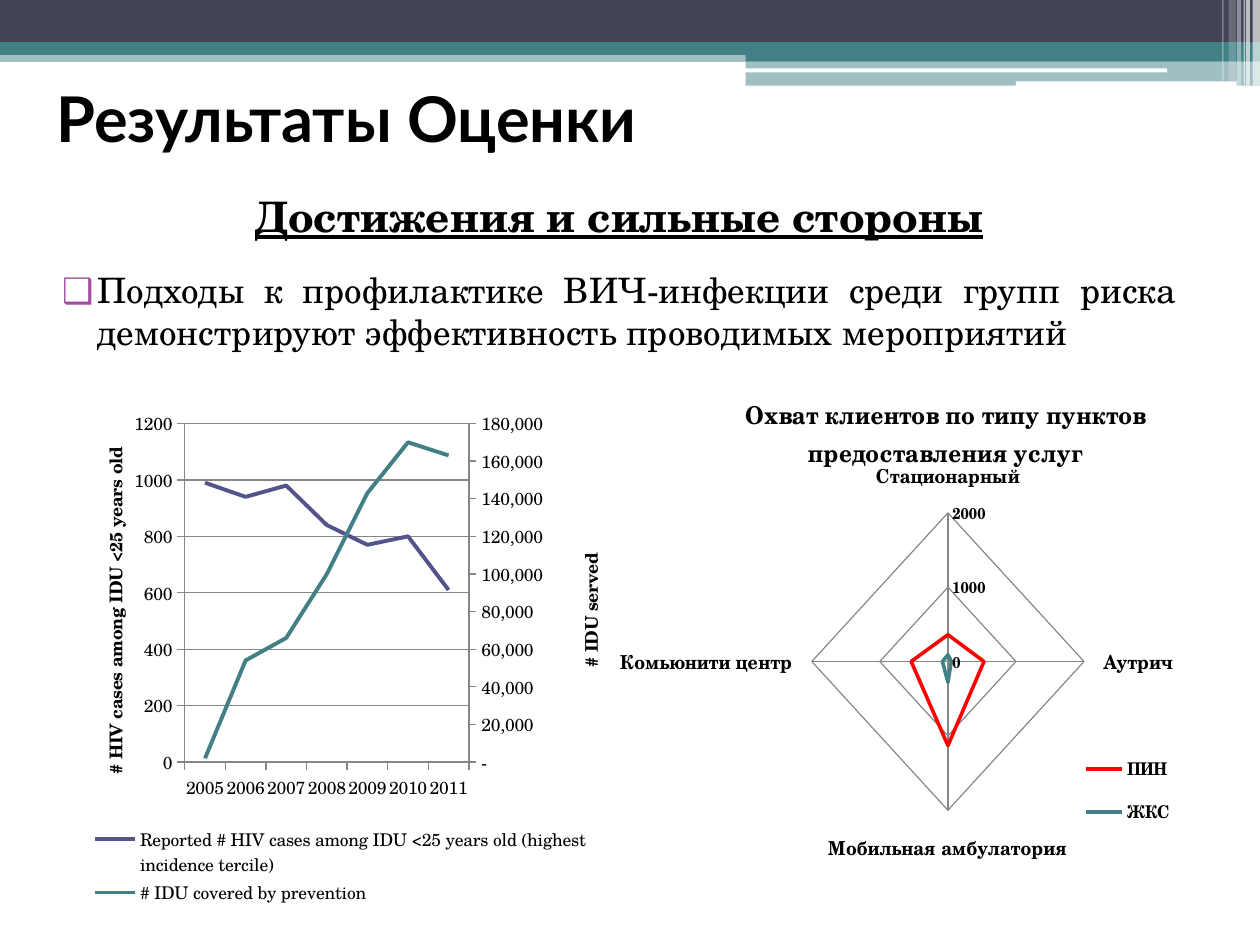
import copy

import lxml.etree
import pptx
import pptx.chart.axis
import pptx.chart.data
import pptx.dml.color
import pptx.enum.chart
import pptx.enum.shapes
import pptx.enum.text
import pptx.oxml.ns
import pptx.util

Cm, Pt = pptx.util.Cm, pptx.util.Pt
RGBColor = pptx.dml.color.RGBColor
qn = pptx.oxml.ns.qn
ChartType = pptx.enum.chart.XL_CHART_TYPE
Legend = pptx.enum.chart.XL_LEGEND_POSITION
Tick = pptx.enum.chart.XL_TICK_MARK
Align = pptx.enum.text.PP_ALIGN
Preset = pptx.enum.shapes.MSO_SHAPE

BLACK = RGBColor(0x00, 0x00, 0x00)
WHITE = RGBColor(0xFF, 0xFF, 0xFF)
SLATE = RGBColor(0x42, 0x44, 0x56)
TEAL = RGBColor(0x43, 0x80, 0x86)
INDIGO = RGBColor(0x53, 0x54, 0x8A)
RED = RGBColor(0xFF, 0x00, 0x00)
GRAY = RGBColor(0x86, 0x86, 0x86)
PURPLE = RGBColor(0xA0, 0x4D, 0xA3)
SERIF, SANS = "TeX Gyre Schola", "Lato"


def place(element, x, y, w=None, h=None):
    """Give a chart part a manual layout, in fractions of the chart."""
    for old in element.findall(qn("c:layout")):
        element.remove(old)
    layout = lxml.etree.Element(qn("c:layout"))
    manual = lxml.etree.SubElement(layout, qn("c:manualLayout"))
    settings = [("xMode", "edge"), ("yMode", "edge"), ("x", x), ("y", y), ("w", w), ("h", h)]
    if element.tag == qn("c:plotArea"):
        settings.insert(0, ("layoutTarget", "inner"))
    for name, value in settings:
        if value is not None:
            lxml.etree.SubElement(manual, qn("c:" + name)).set("val", str(value))
    leaders = (qn("c:tx"), qn("c:legendPos"))
    element.insert(sum(child.tag in leaders for child in element), layout)


def write(para, text, size, font=SERIF, bold=True, underline=None):
    span = para.add_run()
    span.text = text
    span.font.size, span.font.name = Pt(size), font
    span.font.bold, span.font.underline = bold, underline
    span.font.color.rgb = BLACK


deck = pptx.Presentation()
deck.slide_width, deck.slide_height = Cm(25.4), Cm(19.05)
page = deck.slides.add_slide(deck.slide_layouts[1])

# Header bands and stripes: preset, left, top, width, height, colour, opacity in percent
header = [
    (Preset.RECTANGLE, 0, 1.02, 25.4, 0.23, TEAL, 50),
    (Preset.RECTANGLE, 0, 0, 25.4, 0.86, SLATE, 100),
    (Preset.RECTANGLE, 0, 0.85, 25.4, 0.26, TEAL, 100),
    (Preset.RECTANGLE, 15.03, 0.98, 10.37, 0.25, TEAL, 100),
    (Preset.RECTANGLE, 15.03, 1.23, 10.37, 0.5, TEAL, 50),
    (Preset.ROUNDED_RECTANGLE, 15.02, 1.38, 8.51, 0.08, WHITE, 100),
    (Preset.ROUNDED_RECTANGLE, 20.48, 1.64, 4.45, 0.1, WHITE, 100),
]
stripes = [(25.25, 0.15, 1.73, 65), (25.12, 0.08, 1.73, 65), (25.07, 0.03, 1.73, 60),
           (24.94, 0.08, 1.73, 40), (24.77, 0.15, 1.63, 20), (24.64, 0.03, 1.63, 30)]
header += [(Preset.RECTANGLE, left, 0, width, height, WHITE, opacity)
           for left, width, height, opacity in stripes]
for preset, left, top, width, height, color, opacity in header:
    box = page.shapes.add_shape(preset, Cm(left), Cm(top), Cm(width), Cm(height))
    box.shadow.inherit = False
    box.line.fill.background()
    box.fill.solid()
    box.fill.fore_color.rgb = color
    if opacity < 100:
        fill = box._element.spPr.find(".//" + qn("a:srgbClr"))
        lxml.etree.SubElement(fill, qn("a:alpha")).set("val", str(opacity * 1000))

# Title and list
title, body = page.shapes.title, page.placeholders[1]
title.left, title.top, title.width, title.height = Cm(0.89), Cm(1.47), Cm(21.59), Cm(1.8)
title.text_frame.auto_size = pptx.enum.text.MSO_AUTO_SIZE.NONE
title.text_frame.paragraphs[0].alignment = Align.LEFT
write(title.text_frame.paragraphs[0], "Результаты Оценки", 36, SANS)

body.left, body.top, body.width, body.height = Cm(0.69), Cm(3.71), Cm(23.28), Cm(12.57)
body.text_frame.auto_size = pptx.enum.text.MSO_AUTO_SIZE.NONE
heading, point = body.text_frame.paragraphs[0], body.text_frame.add_paragraph()
write(heading, "Достижения и сильные стороны", 24, underline=True)
write(point, "Подходы к профилактике ВИЧ-инфекции среди групп риска "
             "демонстрируют эффективность проводимых мероприятий", 20, bold=False)
for para, alignment, before in ((heading, Align.CENTER, 3), (point, Align.JUSTIFY, 16)):
    para.alignment, para.space_before = alignment, Pt(before)
    props = para._p.get_or_add_pPr()
    props.set("marL", str(Cm(1.02)))
    props.set("indent", str(-Cm(0.71)))
lxml.etree.SubElement(heading._p.pPr, qn("a:buNone"))
bullet_color = lxml.etree.SubElement(point._p.pPr, qn("a:buClr"))
lxml.etree.SubElement(bullet_color, qn("a:srgbClr")).set("val", str(PURPLE))
lxml.etree.SubElement(point._p.pPr, qn("a:buFont")).set("typeface", SERIF)
lxml.etree.SubElement(point._p.pPr, qn("a:buChar")).set("char", "❑")

# Both charts
cases_data = pptx.chart.data.CategoryChartData()
cases_data.categories = [str(year) for year in range(2005, 2012)]
cases_data.add_series("Reported # HIV cases among IDU <25 years old (highest incidence tercile)",
                      (990, 940, 980, 840, 770, 800, 610))
cases_data.add_series("# IDU covered by prevention",
                      (2000, 54000, 66000, 100000, 143000, 170000, 163000))
clients_data = pptx.chart.data.CategoryChartData()
clients_data.categories = ["Стационарный", "Аутрич", "Мобильная амбулатория", "Комьюнити центр"]
clients_data.add_series("ПИН", (360, 530, 1130, 540))
clients_data.add_series("ЖКС", (90, 50, 280, 80))

cases = page.shapes.add_chart(ChartType.LINE, Cm(1.3), Cm(8.13), Cm(11.02), Cm(10.19),
                              cases_data).chart
clients = page.shapes.add_chart(ChartType.RADAR, Cm(12.5), Cm(7.52), Cm(11.99), Cm(10.39),
                                clients_data).chart
for chart, colors, legend_spot, top_value, step in (
        (cases, (INDIGO, TEAL), Legend.BOTTOM, 1200, 200),
        (clients, (RED, TEAL), Legend.RIGHT, 2000, 1000)):
    chart.font.size, chart.font.name, chart.font.color.rgb = Pt(10), SERIF, BLACK
    chart.has_legend = True
    chart.legend.position, chart.legend.include_in_layout = legend_spot, False
    for series, color in zip(chart.plots[0].series, colors):
        series.smooth = False
        series.marker.style = pptx.enum.chart.XL_MARKER_STYLE.NONE
        series.format.line.color.rgb, series.format.line.width = color, Pt(2.25)
    scale = chart.value_axis
    scale.minimum_scale, scale.maximum_scale, scale.major_unit = 0, top_value, step
    scale.has_major_gridlines = True
    scale.major_gridlines.format.line.color.rgb = GRAY
    for axis in (scale, chart.category_axis):
        axis.format.line.color.rgb, axis.format.line.width = GRAY, Pt(0.75)
        axis.major_tick_mark = Tick.OUTSIDE if chart is cases else Tick.NONE
        axis.tick_labels.number_format = "General"
        axis.tick_labels.number_format_is_linked = False

# Line chart: the second series goes on an axis at the right
cases.has_title = False
reported = cases.value_axis
area = cases._chartSpace.find(".//" + qn("c:plotArea"))
left_lines = area.find(qn("c:lineChart"))
right_lines = copy.deepcopy(left_lines)
left_lines.remove(left_lines.findall(qn("c:ser"))[1])
right_lines.remove(right_lines.findall(qn("c:ser"))[0])
left_lines.addnext(right_lines)
right_scale = copy.deepcopy(area.find(qn("c:valAx")))
right_years = copy.deepcopy(area.find(qn("c:catAx")))
area.find(qn("c:valAx")).addnext(right_scale)
right_scale.addnext(right_years)
for ref, number in zip(right_lines.findall(qn("c:axId")), ("5001", "5002")):
    ref.set("val", number)
for element, own, other in ((right_years, "5001", "5002"), (right_scale, "5002", "5001")):
    element.find(qn("c:axId")).set("val", own)
    element.find(qn("c:crossAx")).set("val", other)
right_scale.find(qn("c:axPos")).set("val", "r")
right_scale.find(qn("c:crosses")).set("val", "max")
pptx.chart.axis.CategoryAxis(right_years).visible = False
served = pptx.chart.axis.ValueAxis(right_scale)
served.has_major_gridlines = False
served.maximum_scale, served.major_unit = 180000, 20000
served.tick_labels.number_format = '#,##0;-#,##0;"-"'
for axis, text, x, y in ((reported, "# HIV cases among IDU <25 years old", 0.06, 0.08),
                         (served, "# IDU served", 0.93, 0.29)):
    frame = axis.axis_title.text_frame
    write(frame.paragraphs[0], text, 10)
    axis_title = axis.axis_title._element
    turn = axis_title.find(".//" + qn("a:bodyPr"))
    turn.set("rot", "-5400000")
    turn.set("vert", "horz")
    place(axis_title, x, y)
place(area, 0.22, 0.04, 0.52, 0.67)
place(cases.legend._element, 0.03, 0.83, 0.95, 0.17)

# Radar chart
clients.has_title = True
write(clients.chart_title.text_frame.paragraphs[0],
      "Охват клиентов по типу пунктов предоставления услуг", 14)
clients.chart_title.include_in_layout = False
clients.category_axis.has_major_gridlines = True
clients.category_axis.major_gridlines.format.line.color.rgb = GRAY
clients.category_axis.format.line.fill.background()
for part, size in ((clients.category_axis.tick_labels, 11),
                   (clients.value_axis.tick_labels, 9), (clients.legend, 10)):
    part.font.size, part.font.bold = Pt(size), True
    part.font.name, part.font.color.rgb = SERIF, BLACK
place(clients.chart_title._element, 0.13, 0.03)
place(clients._chartSpace.find(".//" + qn("c:plotArea")), 0.26, 0.25, 0.5, 0.62)
place(clients.legend._element, 0.74, 0.71, 0.2, 0.2)

deck.save("out.pptx")
